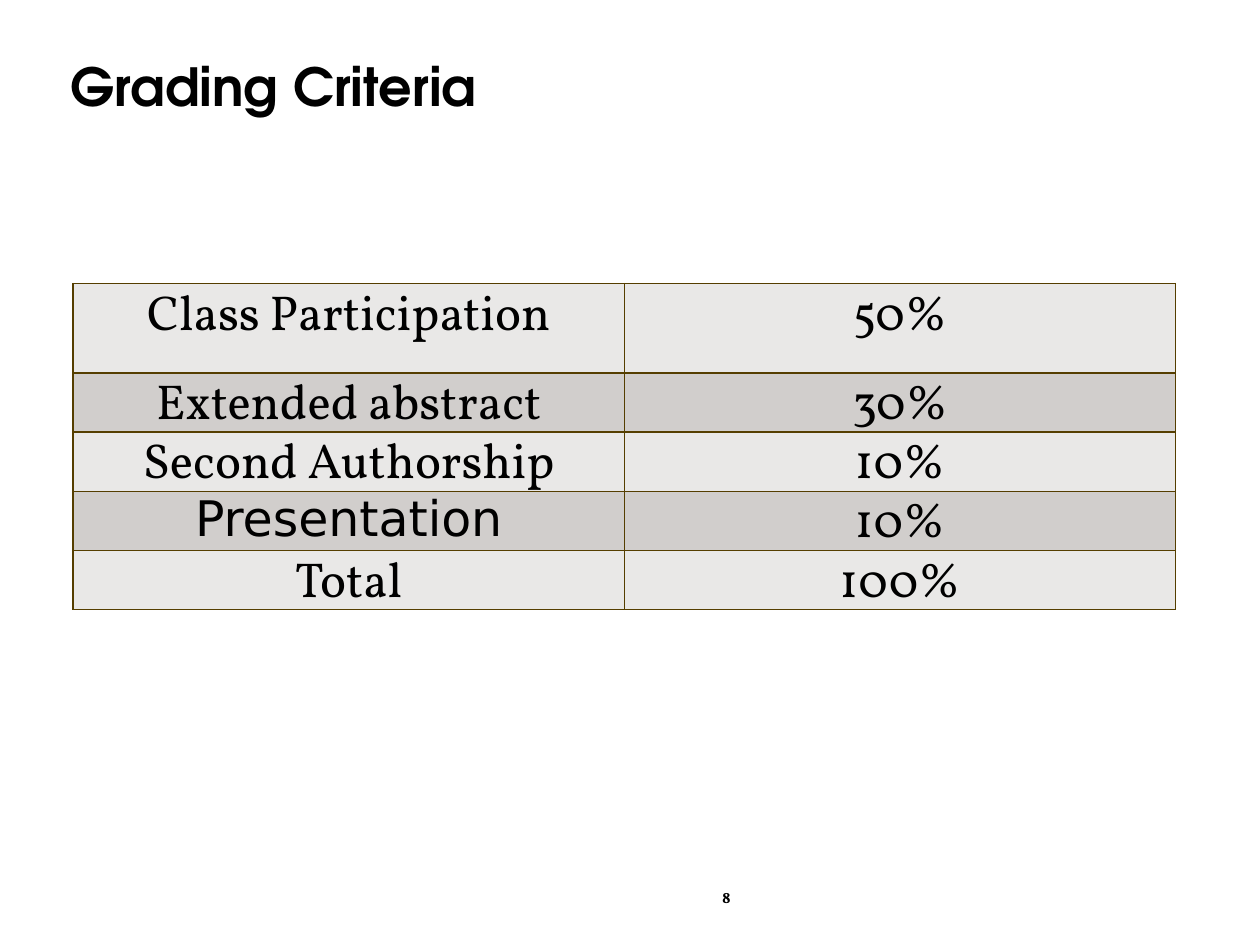
from typing import NamedTuple

from lxml.etree import SubElement
from pptx import Presentation
from pptx.dml.color import RGBColor
from pptx.enum.text import MSO_ANCHOR as Anchor, PP_ALIGN as Align
from pptx.oxml.ns import qn
from pptx.util import Inches, Pt

SERIF, SANS, HEAD = "Vollkorn", "DejaVu Sans", "TeX Gyre Adventor"
BLACK, EDGE = "000000", "553E00"
BANDS = ("E9E8E7", "D1CECC")


class Grade(NamedTuple):
    item: str
    share: str
    face: str = SERIF
    height: float = 0.47


GRADES = [
    Grade("Class Participation", "50%", height=0.71),
    Grade("Extended abstract", "30%"),
    Grade("Second Authorship", "10%"),
    Grade("Presentation", "10%", face=SANS),
    Grade("Total", "100%"),
]


def color(code: str) -> RGBColor:
    return RGBColor.from_string(code)


def add_run(para, text: str, face: str, size: float, bold: bool = False) -> None:
    run = para.add_run()
    run.text = text
    font = run.font
    font.name, font.size, font.bold = face, Pt(size), bold
    font.color.rgb = color(BLACK)


def add_edges(cell, code: str, width: float) -> None:
    """Line all four sides; borders must precede the fill in the XML."""
    props = cell._tc.get_or_add_tcPr()
    for i, side in enumerate(("lnL", "lnR", "lnT", "lnB")):
        line = SubElement(props, qn(f"a:{side}"), w=str(Pt(width)))
        fill = SubElement(line, qn("a:solidFill"))
        SubElement(fill, qn("a:srgbClr"), val=code)
        props.insert(i, line)


def fill_cell(cell, text: str, face: str, band: str) -> None:
    cell.margin_left = cell.margin_right = Inches(0.07)
    cell.margin_top = cell.margin_bottom = 0
    cell.fill.solid()
    cell.fill.fore_color.rgb = color(band)
    add_edges(cell, EDGE, 1)
    para = cell.text_frame.paragraphs[0]
    para.alignment = Align.CENTER
    add_run(para, text, face, 28)


def add_title(slide, text: str) -> None:
    title = slide.shapes.title
    title.left, title.top = Inches(0.46), Inches(0.24)
    title.width, title.height = Inches(8.92), Inches(0.94)
    frame = title.text_frame
    frame.vertical_anchor = Anchor.MIDDLE
    para = frame.paragraphs[0]
    para.alignment, para.line_spacing = Align.LEFT, 0.9
    add_run(para, text, HEAD, 30, bold=True)


def add_grades(slide, grades: list[Grade]) -> None:
    total = sum(grade.height for grade in grades)
    table = slide.shapes.add_table(
        len(grades), 2, Inches(0.58), Inches(2.25), Inches(8.75), Inches(total)
    ).table
    table.first_row = table.horz_banding = False
    for i, grade in enumerate(grades):
        table.rows[i].height = Inches(grade.height)
        band = BANDS[i % 2]
        fill_cell(table.cell(i, 0), grade.item, grade.face, band)
        fill_cell(table.cell(i, 1), grade.share, SERIF, band)


def add_number(slide, text: str) -> None:
    box = slide.shapes.add_textbox(Inches(0.58), Inches(7), Inches(9.17), Inches(0.25))
    frame = box.text_frame
    frame.word_wrap = True
    para = frame.paragraphs[0]
    para.alignment = Align.CENTER
    # Indent moves the centred number right of the middle
    para._p.get_or_add_pPr().set("marL", str(Inches(1.2)))
    add_run(para, text, SERIF, 9, bold=True)


def main() -> None:
    deck = Presentation()
    deck.slide_width, deck.slide_height = Inches(10), Inches(7.5)
    slide = deck.slides.add_slide(deck.slide_layouts[5])
    add_number(slide, "8")
    add_title(slide, "Grading Criteria")
    add_grades(slide, GRADES)
    deck.save("out.pptx")


if __name__ == "__main__":
    main()
